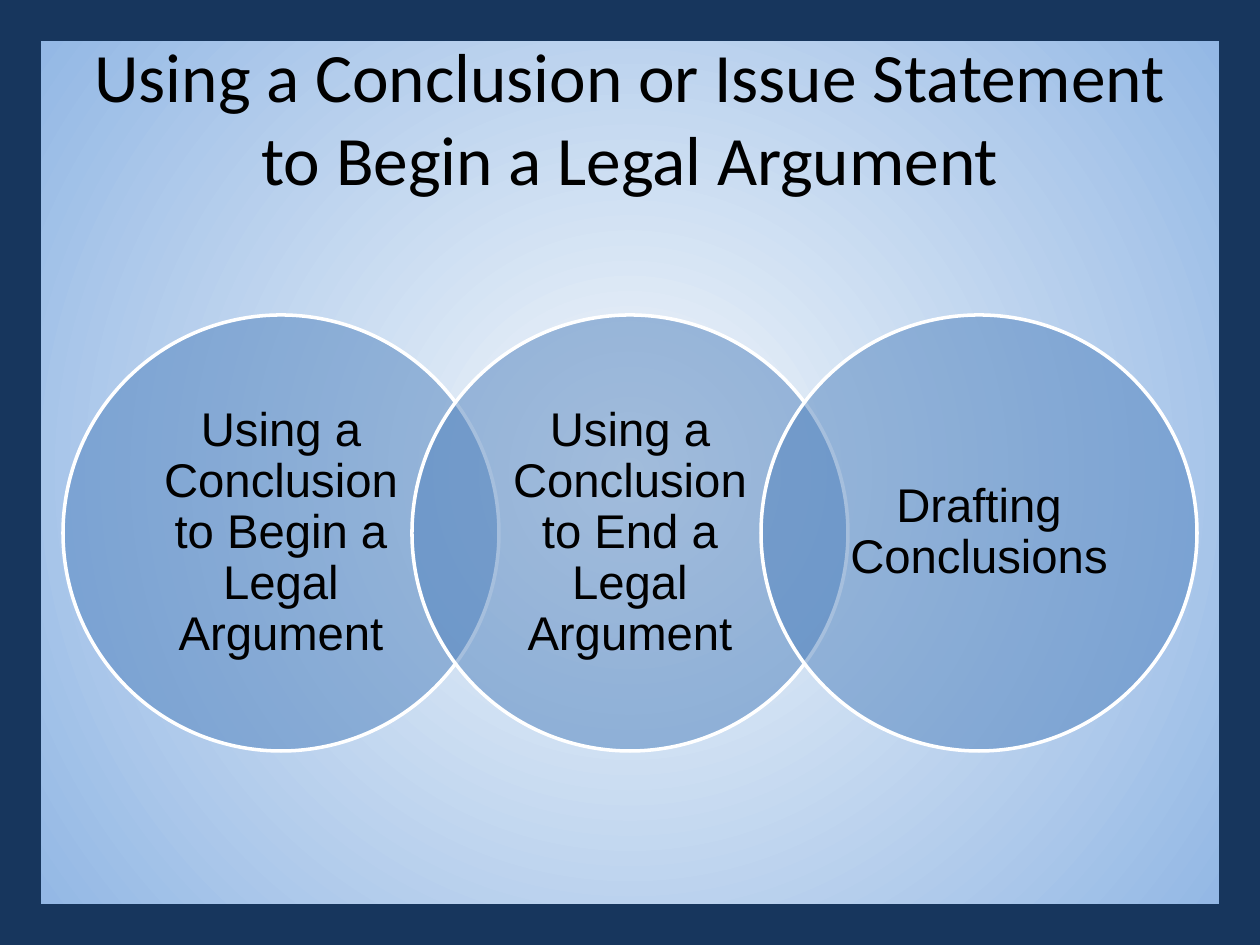
from lxml import etree
from pptx import Presentation
from pptx import util as u
from pptx.dml.color import RGBColor
from pptx.enum import shapes, text
from pptx.oxml.ns import qn

PX_PER_INCH = 126
SLIDE_BOX = (0, 0, 1260, 945)
TITLE = "Using a Conclusion or Issue Statement to Begin a Legal Argument"
TOPICS = [
    "Using a Conclusion to Begin a Legal Argument",
    "Using a Conclusion to End a Legal Argument",
    "Drafting Conclusions",
]


def px(length):
    return u.Inches(length / PX_PER_INCH)


def color(hex_string):
    return RGBColor.from_string(hex_string)


def place(shape, box):
    shape.left, shape.top, shape.width, shape.height = map(px, box)


def add_outlined_shape(slide, kind, box, line_color, line_width):
    shape = slide.shapes.add_shape(kind, *map(px, box))
    shape.shadow.inherit = False
    shape.line.color.rgb = color(line_color)
    shape.line.width = u.Pt(line_width)
    return shape


def format_text(frame, words, font_name, size, margin_x, margin_y):
    frame.text = words
    frame.word_wrap = True
    frame.auto_size = text.MSO_AUTO_SIZE.NONE
    frame.vertical_anchor = text.MSO_ANCHOR.MIDDLE
    frame.margin_left = frame.margin_right = px(margin_x)
    frame.margin_top = frame.margin_bottom = px(margin_y)
    paragraph = frame.paragraphs[0]
    paragraph.alignment = text.PP_ALIGN.CENTER
    paragraph.font.name = font_name
    paragraph.font.size = u.Pt(size)
    paragraph.font.color.rgb = color("000000")
    return paragraph


def fill_background(slide):
    fill = slide.background.fill
    fill.gradient()
    for stop, hex_string in zip(fill.gradient_stops, ("F4F8FB", "8CB3E3")):
        stop.color.rgb = color(hex_string)
    # Turn the linear gradient into one that spreads from the centre
    linear = slide.element.find(".//" + qn("a:lin"))
    radial = etree.Element(qn("a:path"), path="circle")
    etree.SubElement(radial, qn("a:fillToRect"), l="50000", t="50000", r="50000", b="50000")
    linear.getparent().replace(linear, radial)


def add_frame(slide, box):
    frame = add_outlined_shape(slide, shapes.MSO_SHAPE.RECTANGLE, box, "17365D", 47)
    frame.fill.background()
    # Send the frame behind the title
    slide.shapes.element.insert(2, frame.element)


def set_title(slide, box):
    title = slide.shapes.title
    place(title, box)
    format_text(title.text_frame, TITLE, "Calibri", 39.6, 13, 6)


def add_linked_circles(slide, box, topics):
    left, top, width, diameter = box
    step = (width - diameter) / (len(topics) - 1)
    for index, topic in enumerate(topics):
        circle_box = (left + index * step, top, diameter, diameter)
        circle = add_outlined_shape(slide, shapes.MSO_SHAPE.OVAL, circle_box, "FFFFFF", 2)
        circle.fill.solid()
        circle.fill.fore_color.rgb = color("4F81BD")
        # Half-transparent fill, so that the overlaps show
        fill_color = circle.element.spPr.find(qn("a:solidFill")).find(qn("a:srgbClr"))
        etree.SubElement(fill_color, qn("a:alpha"), val="50000")
        paragraph = format_text(circle.text_frame, topic, "Arial", 27, 24, 5)
        paragraph.line_spacing = 0.9


def main():
    presentation = Presentation()
    presentation.slide_width, presentation.slide_height = map(px, SLIDE_BOX[2:])
    slide = presentation.slides.add_slide(presentation.slide_layouts[5])
    fill_background(slide)
    add_frame(slide, SLIDE_BOX)
    set_title(slide, (63, 38, 1134, 157))
    add_linked_circles(slide, (63, 315, 1134, 436), TOPICS)
    presentation.save("out.pptx")


if __name__ == "__main__":
    main()
